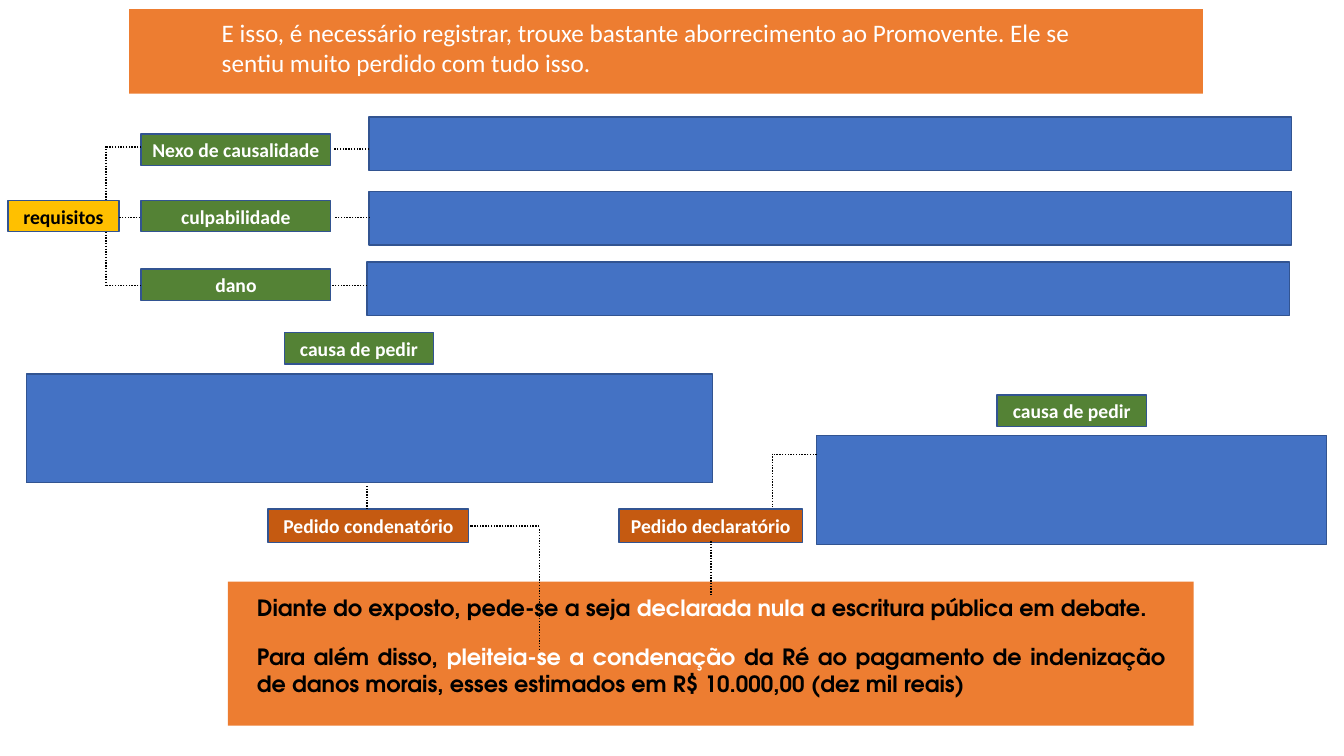
from lxml.etree import SubElement
from pptx import Presentation
from pptx.dml.color import RGBColor
from pptx.enum.dml import MSO_LINE
from pptx.enum.shapes import MSO_CONNECTOR, MSO_SHAPE
from pptx.enum.text import MSO_ANCHOR, MSO_AUTO_SIZE, PP_ALIGN
from pptx.oxml.ns import qn
from pptx.util import Inches, Pt

BLACK, WHITE, BORDER = "000000", "FFFFFF", "325491"
ORANGE, RUST, BLUE, GREEN, YELLOW = "ED7D31", "C55A11", "4472C4", "548235", "FFC000"


def paint(color_format, color):
    color_format.rgb = RGBColor.from_string(color)


def write(para, text, color, formats):
    span = para.add_run()
    span.text = text
    for name, value in formats.items():
        setattr(span.font, name, value)
    paint(span.font.color, color)


deck = Presentation()
deck.slide_width, deck.slide_height = Inches(13.33), Inches(7.5)
page = deck.slides.add_slide(deck.slide_layouts[6])

label_format = {"name": "Calibri", "size": Pt(14), "bold": True}
banner_format = {"name": "Calibri", "size": Pt(18)}
request_format = {"name": "TeX Gyre Adventor", "size": Pt(16), "bold": True}

boxes = [
    (2.26, 5.77, 9.58, 1.43, ORANGE, None, ""),
    (1.28, 0.09, 10.65, 0.84, ORANGE, None, ""),
    (8.1, 4.32, 5.06, 1.08, BLUE, BORDER, ""),
    (0.26, 3.71, 6.81, 1.08, BLUE, BORDER, ""),
    (3.66, 1.16, 9.15, 0.53, BLUE, BORDER, ""),
    (3.66, 1.9, 9.15, 0.53, BLUE, BORDER, ""),
    (3.64, 2.6, 9.15, 0.53, BLUE, BORDER, ""),
    (0.08, 1.99, 1.1, 0.31, YELLOW, BORDER, "requisitos"),
    (1.4, 1.33, 1.88, 0.31, GREEN, BORDER, "Nexo de causalidade"),
    (1.4, 1.99, 1.88, 0.31, GREEN, BORDER, "culpabilidade"),
    (1.4, 2.67, 1.88, 0.31, GREEN, BORDER, "dano"),
    (2.82, 3.3, 1.48, 0.31, GREEN, BORDER, "causa de pedir"),
    (9.89, 3.92, 1.48, 0.31, GREEN, BORDER, "causa de pedir"),
    (2.66, 5.05, 1.99, 0.33, RUST, BORDER, "Pedido condenatório"),
    (6.14, 5.05, 1.82, 0.33, RUST, BORDER, "Pedido declaratório"),
]
for left, top, width, height, fill, border, label in boxes:
    box = page.shapes.add_shape(
        MSO_SHAPE.RECTANGLE, Inches(left), Inches(top), Inches(width), Inches(height))
    box.shadow.inherit = False
    box.fill.solid()
    paint(box.fill.fore_color, fill)
    if border:
        paint(box.line.color, border)
        box.line.width = Pt(1)
    else:
        box.line.fill.background()
    if label:
        box.text_frame.word_wrap = False
        box.text_frame.vertical_anchor = MSO_ANCHOR.MIDDLE
        para = box.text_frame.paragraphs[0]
        para.alignment = PP_ALIGN.CENTER
        write(para, label, BLACK if fill == YELLOW else WHITE, label_format)

texts = [
    (2.1, 0.12, 8.79, 0.71, PP_ALIGN.LEFT, banner_format, [
        ("E isso, é necessário registrar, trouxe bastante aborrecimento ao Promovente. "
         "Ele se sentiu muito perdido com tudo isso.", WHITE)]),
    (2.45, 5.85, 9.21, 0.37, PP_ALIGN.JUSTIFY, request_format, [
        ("Diante do exposto, pede-se a seja ", BLACK),
        ("declarada nula", WHITE),
        (" a escritura pública em debate. ", BLACK)]),
    (2.45, 6.33, 9.21, 0.64, PP_ALIGN.JUSTIFY, request_format, [
        ("Para além disso, ", BLACK),
        ("pleiteia-se a condenação", WHITE),
        (" da Ré ao pagamento de indenização de danos morais, "
         "esses estimados em R$ 10.000,00 (dez mil reais)", BLACK)]),
]
for left, top, width, height, alignment, formats, spans in texts:
    box = page.shapes.add_textbox(Inches(left), Inches(top), Inches(width), Inches(height))
    box.text_frame.word_wrap = True
    box.text_frame.auto_size = MSO_AUTO_SIZE.SHAPE_TO_FIT_TEXT
    para = box.text_frame.paragraphs[0]
    para.alignment = alignment
    for text, color in spans:
        write(para, text, color, formats)

dotted_lines = [
    (7.05, 5.37, 7.05, 5.9),
    (7.66, 4.5, 7.66, 5.03),
    (8.1, 4.51, 7.66, 4.51),
    (5.35, 5.22, 4.66, 5.22),
    (5.35, 5.25, 5.35, 6.44),
    (3.64, 4.82, 3.64, 5.05),
    (1.39, 2.16, 1.17, 2.16),
    (1.05, 2.3, 1.05, 2.83),
    (1.05, 1.45, 1.05, 1.98),
    (1.4, 1.46, 1.06, 1.46),
    (1.4, 2.83, 1.06, 2.83),
    (3.66, 1.48, 3.31, 1.48),
    (3.67, 2.16, 3.32, 2.16),
    (3.64, 2.83, 3.29, 2.83),
]
for points in dotted_lines:
    connector = page.shapes.add_connector(MSO_CONNECTOR.STRAIGHT, *map(Inches, points))
    paint(connector.line.color, BLACK)
    connector.line.width = Pt(1)
    connector.line.dash_style = MSO_LINE.ROUND_DOT
    SubElement(connector.element.spPr, qn("a:effectLst"))

deck.save("out.pptx")
